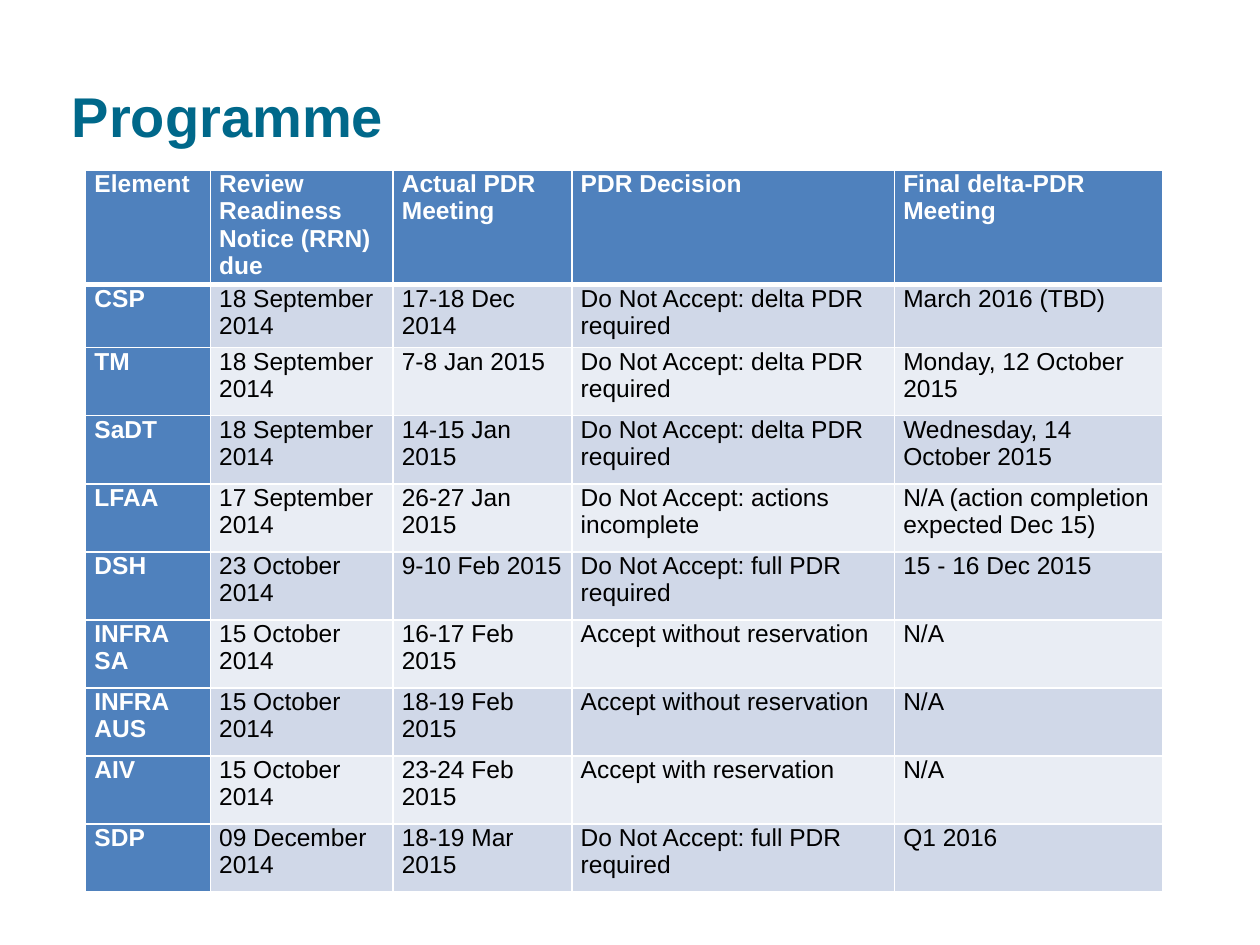
from dataclasses import dataclass

from lxml.etree import SubElement
from pptx import Presentation
from pptx.dml.color import RGBColor
from pptx.enum.text import MSO_ANCHOR, PP_ALIGN
from pptx.oxml.ns import qn
from pptx.util import Inches, Pt


@dataclass(frozen=True)
class Theme:
    font: str = "Arial"
    title: str = "00688A"
    header: str = "4F81BD"
    bands: tuple = ("D0D8E8", "E9EDF4")
    light: str = "FFFFFF"
    dark: str = "000000"
    title_size: int = 32
    cell_size: int = 14
    rule: int = 1
    header_rule: int = 3


THEME = Theme()
TABLE_LEFT, TABLE_TOP = 0.68, 1.35
COLUMN_WIDTHS = [0.99, 1.45, 1.42, 2.56, 2.13]
HEADER_HEIGHT, FIRST_HEIGHT, ROW_HEIGHT = 0.91, 0.5, 0.54

HEADINGS = ("Element", "Review Readiness Notice (RRN) due", "Actual PDR Meeting",
            "PDR Decision", "Final delta-PDR Meeting")
DELTA = "Do Not Accept: delta PDR required"
FULL = "Do Not Accept: full PDR required"
ACCEPT = "Accept without reservation"
REVIEWS = [
    ("CSP", "18 September 2014", "17-18 Dec 2014", DELTA, "March 2016 (TBD)"),
    ("TM", "18 September 2014", "7-8 Jan 2015", DELTA, "Monday, 12 October 2015"),
    ("SaDT", "18 September 2014", "14-15 Jan 2015", DELTA, "Wednesday, 14 October 2015"),
    ("LFAA", "17 September 2014", "26-27 Jan 2015", "Do Not Accept: actions incomplete",
     "N/A (action completion expected Dec 15)"),
    ("DSH", "23 October 2014", "9-10 Feb 2015", FULL, "15 - 16 Dec 2015"),
    ("INFRA SA", "15 October 2014", "16-17 Feb 2015", ACCEPT, "N/A"),
    ("INFRA AUS", "15 October 2014", "18-19 Feb 2015", ACCEPT, "N/A"),
    ("AIV", "15 October 2014", "23-24 Feb 2015", "Accept with reservation", "N/A"),
    ("SDP", "09 December 2014", "18-19 Mar 2015", FULL, "Q1 2016"),
]


def apply_format(target, values):
    for name, value in values.items():
        setattr(target, name, value)


def format_font(font, size, color, bold):
    apply_format(font, {"name": THEME.font, "size": Pt(size), "bold": bold})
    font.color.rgb = RGBColor.from_string(color)


def add_title(slide, text):
    sp = slide.shapes.title
    apply_format(sp, {"left": Inches(0.47), "top": Inches(0.57),
                      "width": Inches(6.86), "height": Inches(0.68)})
    tf = sp.text_frame
    apply_format(tf, {"text": text, "word_wrap": True,
                      "vertical_anchor": MSO_ANCHOR.MIDDLE})
    p = tf.paragraphs[0]
    p.alignment = PP_ALIGN.LEFT
    format_font(p.runs[0].font, THEME.title_size, THEME.title, True)


def set_borders(cell, top, bottom):
    """Draw the cell's four borders; call before the fill, which follows them in the XML."""
    tc_pr = cell._tc.get_or_add_tcPr()
    widths = {"a:lnL": THEME.rule, "a:lnR": THEME.rule, "a:lnT": top, "a:lnB": bottom}
    for tag, width in widths.items():
        ln = SubElement(tc_pr, qn(tag), w=str(Pt(width)))
        fill = SubElement(ln, qn("a:solidFill"))
        SubElement(fill, qn("a:srgbClr"), val=THEME.light)


def fill_cell(cell, text, row, column):
    is_heading = row == 0 or column == 0
    set_borders(cell,
                top=THEME.header_rule if row == 1 else THEME.rule,
                bottom=THEME.header_rule if row == 0 else THEME.rule)
    cell.fill.solid()
    color = THEME.header if is_heading else THEME.bands[(row - 1) % 2]
    cell.fill.fore_color.rgb = RGBColor.from_string(color)
    apply_format(cell, {"text": text, "margin_left": Inches(0.07),
                        "margin_right": Inches(0.07),
                        "margin_top": 0, "margin_bottom": 0})
    format_font(cell.text_frame.paragraphs[0].runs[0].font, THEME.cell_size,
                THEME.light if is_heading else THEME.dark, is_heading)


def add_review_table(slide):
    rows = [HEADINGS, *REVIEWS]
    heights = [HEADER_HEIGHT, FIRST_HEIGHT] + [ROW_HEIGHT] * (len(rows) - 2)
    table = slide.shapes.add_table(
        len(rows), len(HEADINGS), Inches(TABLE_LEFT), Inches(TABLE_TOP),
        Inches(sum(COLUMN_WIDTHS)), Inches(sum(heights))).table
    table.first_col = True
    for column, width in zip(table.columns, COLUMN_WIDTHS):
        column.width = Inches(width)
    for row, height in zip(table.rows, heights):
        row.height = Inches(height)
    for i, texts in enumerate(rows):
        for j, text in enumerate(texts):
            fill_cell(table.cell(i, j), text, i, j)


def main():
    prs = Presentation()
    prs.slide_width, prs.slide_height = Inches(10), Inches(7.5)
    slide = prs.slides.add_slide(prs.slide_layouts.get_by_name("Title Only"))
    add_review_table(slide)
    add_title(slide, "Programme")
    prs.save("out.pptx")


if __name__ == "__main__":
    main()
